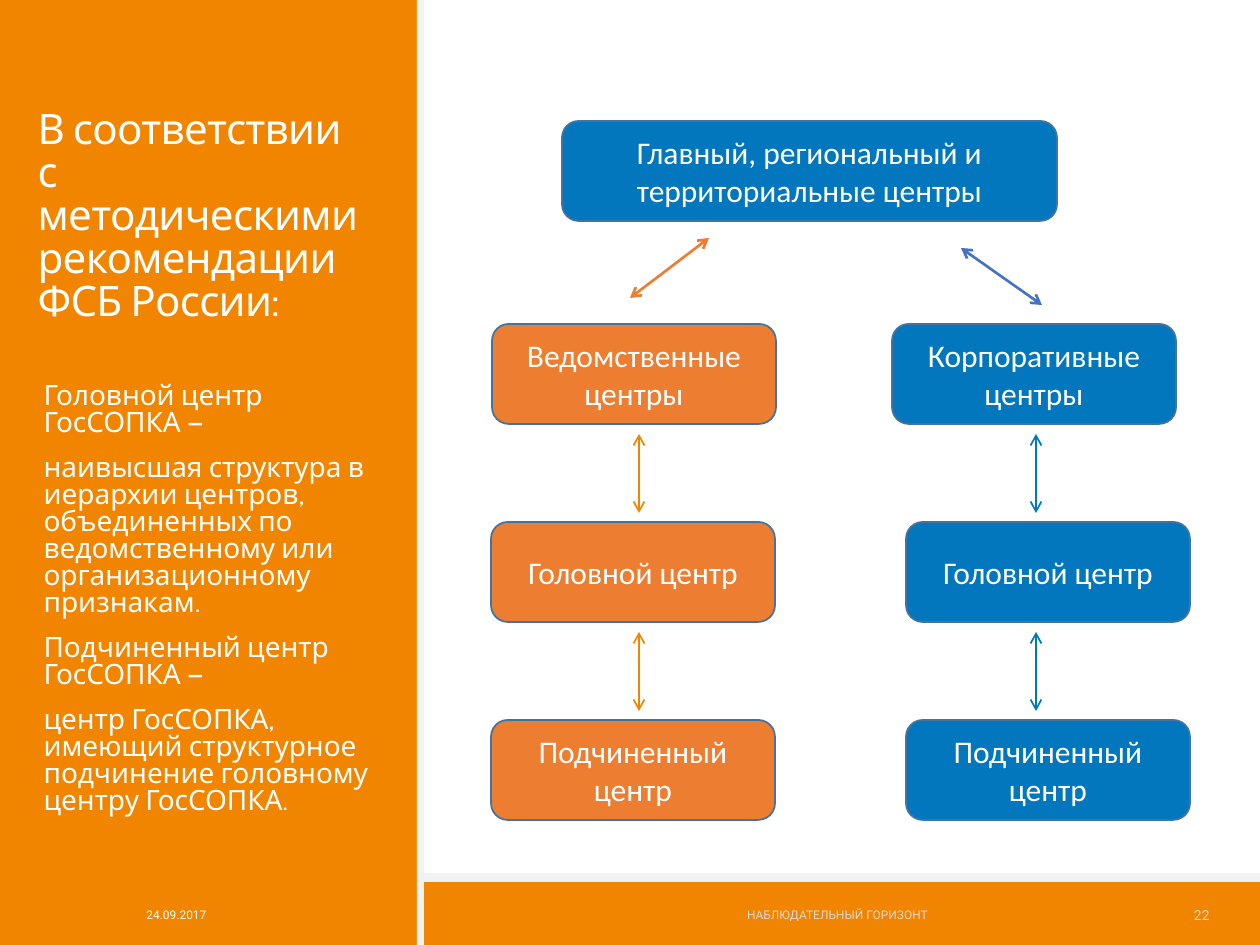
"""Build the slide on the hierarchy of monitoring centres."""
from lxml.etree import SubElement
from pptx import Presentation
from pptx.dml.color import RGBColor
from pptx.enum.shapes import MSO_CONNECTOR, MSO_SHAPE
from pptx.enum.text import MSO_ANCHOR, MSO_AUTO_SIZE, PP_ALIGN
from pptx.oxml.ns import qn
from pptx.util import Pt

WHITE = RGBColor(0xFF, 0xFF, 0xFF)
AMBER = RGBColor(0xF1, 0x85, 0x00)
PALE = RGBColor(0xF2, 0xF2, 0xF2)
GRAY = RGBColor(0xD9, 0xD9, 0xD9)
BLUE = RGBColor(0x02, 0x77, 0xBD)
RUST = RGBColor(0xED, 0x7D, 0x31)
EDGE = RGBColor(0x43, 0x73, 0x9E)
INDIGO = RGBColor(0x44, 0x72, 0xC4)

SCALE = 914400 / 126
WIDE, HIGH = 1260, 945
BOX_W, BOX_H = 284, 100
ROW_TOP, ROW_STEP = 324, 198
GAP, REACH = 10, 79

TITLE = "В соответствии с методическими рекомендации ФСБ России:"
BODY = [
    "Головной центр ГосСОПКА —",
    "наивысшая структура в иерархии центров, объединенных по "
    "ведомственному или организационному признакам.",
    "Подчиненный центр ГосСОПКА —",
    "центр ГосСОПКА, имеющий структурное подчинение головному центру ГосСОПКА.",
]
PANELS = [
    ((0, 882, WIDE, 63), AMBER),
    ((0, 873, WIDE, 9), PALE),
    ((0, 0, 417, HIGH), AMBER),
    ((417, 0, 7, HIGH), PALE),
]
FOOTER = [
    ("24.09.2017", (134, 890, 256, 50), PP_ALIGN.LEFT, 6.8, WHITE),
    ("НАБЛЮДАТЕЛЬНЫЙ ГОРИЗОНТ", (588, 890, 499, 50), PP_ALIGN.CENTER, 6.8, GRAY),
    ("22", (1086, 890, 136, 50), PP_ALIGN.RIGHT, 7.9, GRAY),
]
ROOT = ("Главный, региональный и территориальные центры", (562, 121, 495, BOX_H))
LOWER = ["Головной центр", "Подчиненный центр"]
BRANCHES = [
    {"names": ["Ведомственные центры"] + LOWER, "lefts": (492, 491, 491),
     "fill": RUST, "mid": 639, "line": AMBER},
    {"names": ["Корпоративные центры"] + LOWER, "lefts": (892, 906, 906),
     "fill": BLUE, "mid": 1036, "line": BLUE},
]
SLANTS = [((630, 298, 709, 238), RUST), ((1042, 305, 961, 248), INDIGO)]


def emu(vals):
    return [round(v * SCALE) for v in vals]


def style(obj, vals):
    for key, val in vals.items():
        setattr(obj, key, val)


def write(shape, texts, name, size, color, para, anchor):
    frame = shape.text_frame
    style(frame, {"word_wrap": True, "auto_size": MSO_AUTO_SIZE.NONE,
                  "vertical_anchor": anchor})
    for i, text in enumerate(texts):
        part = frame.paragraphs[0] if i == 0 else frame.add_paragraph()
        style(part, para)
        if i == 0:
            part.space_before = Pt(0)
        run = part.add_run()
        run.text = text
        style(run.font, {"name": name, "size": Pt(size)})
        run.font.color.rgb = color


def block(slide, kind, area, fill, line=None):
    shape = slide.shapes.add_shape(kind, *emu(area))
    shape.shadow.inherit = False
    shape.fill.solid()
    shape.fill.fore_color.rgb = fill
    if line is None:
        shape.line.fill.background()
    else:
        shape.line.color.rgb = line
        shape.line.width = Pt(1)
    return shape


def centre(slide, text, area, fill):
    shape = block(slide, MSO_SHAPE.ROUNDED_RECTANGLE, area, fill, EDGE)
    write(shape, [text], "Calibri", 18, WHITE,
          {"alignment": PP_ALIGN.CENTER}, MSO_ANCHOR.MIDDLE)


def arrow(slide, ends, color, width):
    link = slide.shapes.add_connector(MSO_CONNECTOR.STRAIGHT, *emu(ends))
    link.line.color.rgb = color
    link.line.width = Pt(width)
    props = link.element.spPr
    for tag in ("a:headEnd", "a:tailEnd"):
        SubElement(props.find(qn("a:ln")), qn(tag), type="arrow")
    SubElement(props, qn("a:effectLst"))


def place(holder, area):
    style(holder, dict(zip(("left", "top", "width", "height"), emu(area))))
    tree = holder.element.getparent()
    tree.append(holder.element)


def main():
    deck = Presentation()
    deck.slide_width, deck.slide_height = emu((WIDE, HIGH))
    slide = deck.slides.add_slide(deck.slide_layouts[1])
    for area, fill in PANELS:
        block(slide, MSO_SHAPE.RECTANGLE, area, fill)

    title, body = slide.placeholders
    place(title, (25, 16, 354, 315))
    write(title, [TITLE], "Cabin", 24, WHITE,
          {"alignment": PP_ALIGN.LEFT, "line_spacing": 0.85}, MSO_ANCHOR.BOTTOM)
    title.text_frame.paragraphs[0].runs[0].font._element.set("spc", "-40")

    place(body, (31, 378, 360, 466))
    write(body, BODY, "Cabin", 16, WHITE,
          {"line_spacing": 0.8, "space_before": Pt(9), "space_after": Pt(1.5)},
          MSO_ANCHOR.TOP)
    for part in body.text_frame.paragraphs:
        props = part._p.get_or_add_pPr()
        props.set("marL", "0")
        props.set("indent", "0")
        SubElement(props, qn("a:buNone"))

    for text, area, align, size, color in FOOTER:
        note = slide.shapes.add_textbox(*emu(area))
        write(note, [text], "Roboto", size, color,
              {"alignment": align}, MSO_ANCHOR.MIDDLE)

    centre(slide, *ROOT, BLUE)
    for ends, color in SLANTS:
        arrow(slide, ends, color, 1.5)
    for branch in BRANCHES:
        for i, (name, left) in enumerate(zip(branch["names"], branch["lefts"])):
            top = ROW_TOP + i * ROW_STEP
            centre(slide, name, (left, top, BOX_W, BOX_H), branch["fill"])
            if i:
                start = top - ROW_STEP + BOX_H + GAP
                mid = branch["mid"]
                arrow(slide, (mid, start, mid, start + REACH), branch["line"], 1)
    deck.save("out.pptx")


if __name__ == "__main__":
    main()
